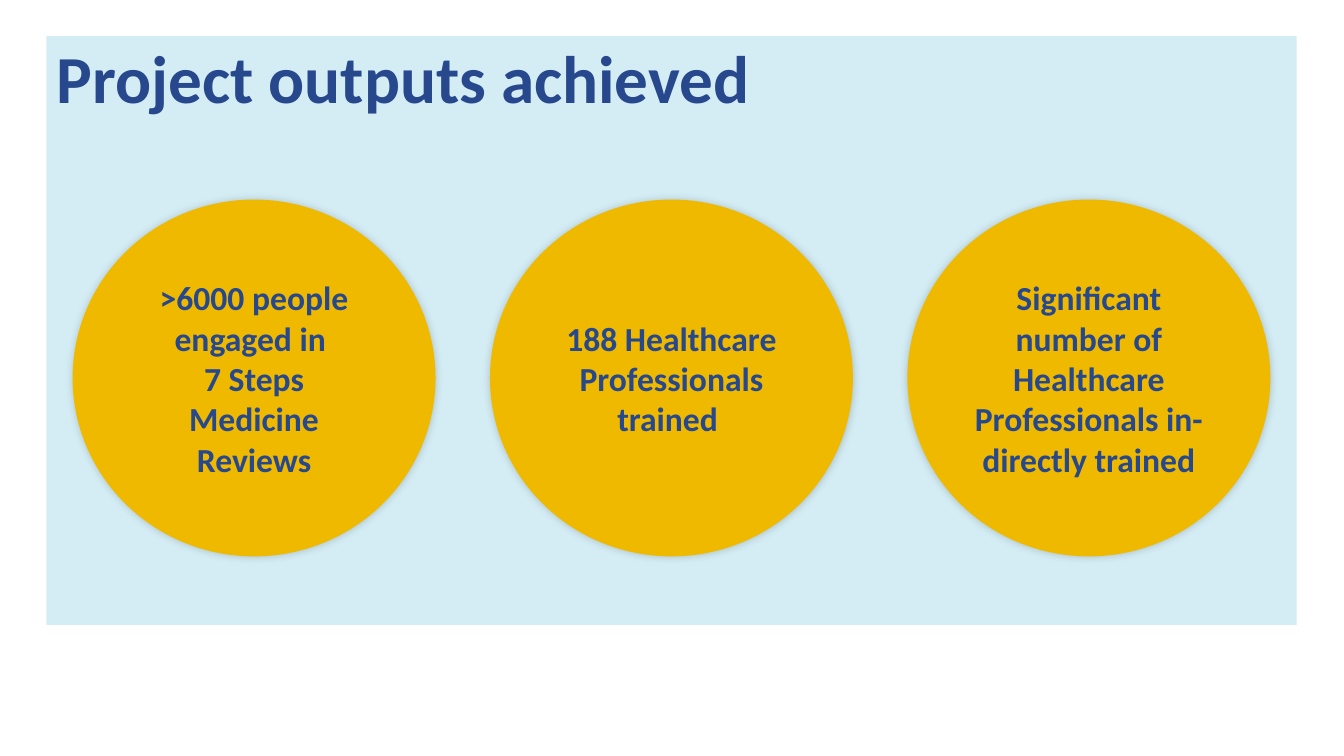
from lxml import etree
from pptx import Presentation
from pptx.dml.color import RGBColor
from pptx.enum import shapes, text
from pptx.oxml import ns
from pptx.util import Inches, Pt

NAVY = RGBColor(0x27, 0x48, 0x8D)
GOLD = RGBColor(0xEF, 0xB9, 0x00)
SKY = RGBColor(0xD4, 0xED, 0xF4)


class Deck:
    face = "Calibri"

    def __init__(self):
        self.show = Presentation()
        self.show.slide_width = Inches(13.33)
        self.show.slide_height = Inches(7.5)
        self.slide = self.show.slides.add_slide(self.show.slide_layouts[6])

    def shape(self, kind, box, fill):
        item = self.slide.shapes.add_shape(kind, *map(Inches, box))
        item.shadow.inherit = False
        item.fill.solid()
        item.fill.fore_color.rgb = fill
        item.line.fill.background()
        return item

    def label(self, frame, lines, size, align):
        frame.word_wrap = True
        frame.text = "\n".join(lines)
        for para in frame.paragraphs:
            para.alignment = align
            para.font.name = self.face
            para.font.size = Pt(size)
            para.font.bold = True
            para.font.color.rgb = NAVY

    def panel(self, box):
        self.shape(shapes.MSO_SHAPE.RECTANGLE, box, SKY)

    def title(self, box, words):
        frame = self.slide.shapes.add_textbox(*map(Inches, box)).text_frame
        self.label(frame, [words], 48, text.PP_ALIGN.LEFT)
        frame.paragraphs[0].line_spacing = 0.9

    def circle(self, box, lines):
        item = self.shape(shapes.MSO_SHAPE.OVAL, box, GOLD)
        self.glow(item)
        frame = item.text_frame
        frame.margin_left = frame.margin_right = Inches(0.11)
        frame.vertical_anchor = text.MSO_ANCHOR.MIDDLE
        self.label(frame, lines, 24, text.PP_ALIGN.CENTER)

    def glow(self, item):
        effects = item._element.spPr.find(ns.qn("a:effectLst"))
        shade = etree.SubElement(effects, ns.qn("a:outerShdw"), blurRad=str(Pt(6)),
                                 dist="0", dir=str(315 * 60000), rotWithShape="0")
        color = etree.SubElement(shade, ns.qn("a:srgbClr"), val="000000")
        etree.SubElement(color, ns.qn("a:alpha"), val="20000")

    def save(self):
        self.show.save("out.pptx")


def main():
    deck = Deck()
    deck.panel((0.46, 0.36, 12.4, 5.84))
    deck.title((0.46, 0.4, 12.48, 0.7), "Project outputs achieved")
    outputs = [
        [">6000 people engaged in ", "7 Steps Medicine Reviews"],
        ["188 Healthcare Professionals trained "],
        ["Significant number of Healthcare Professionals in-directly trained"],
    ]
    for index, lines in enumerate(outputs):
        deck.circle((0.72 + 4.14 * index, 1.98, 3.6, 3.54), lines)
    deck.save()


if __name__ == "__main__":
    main()
